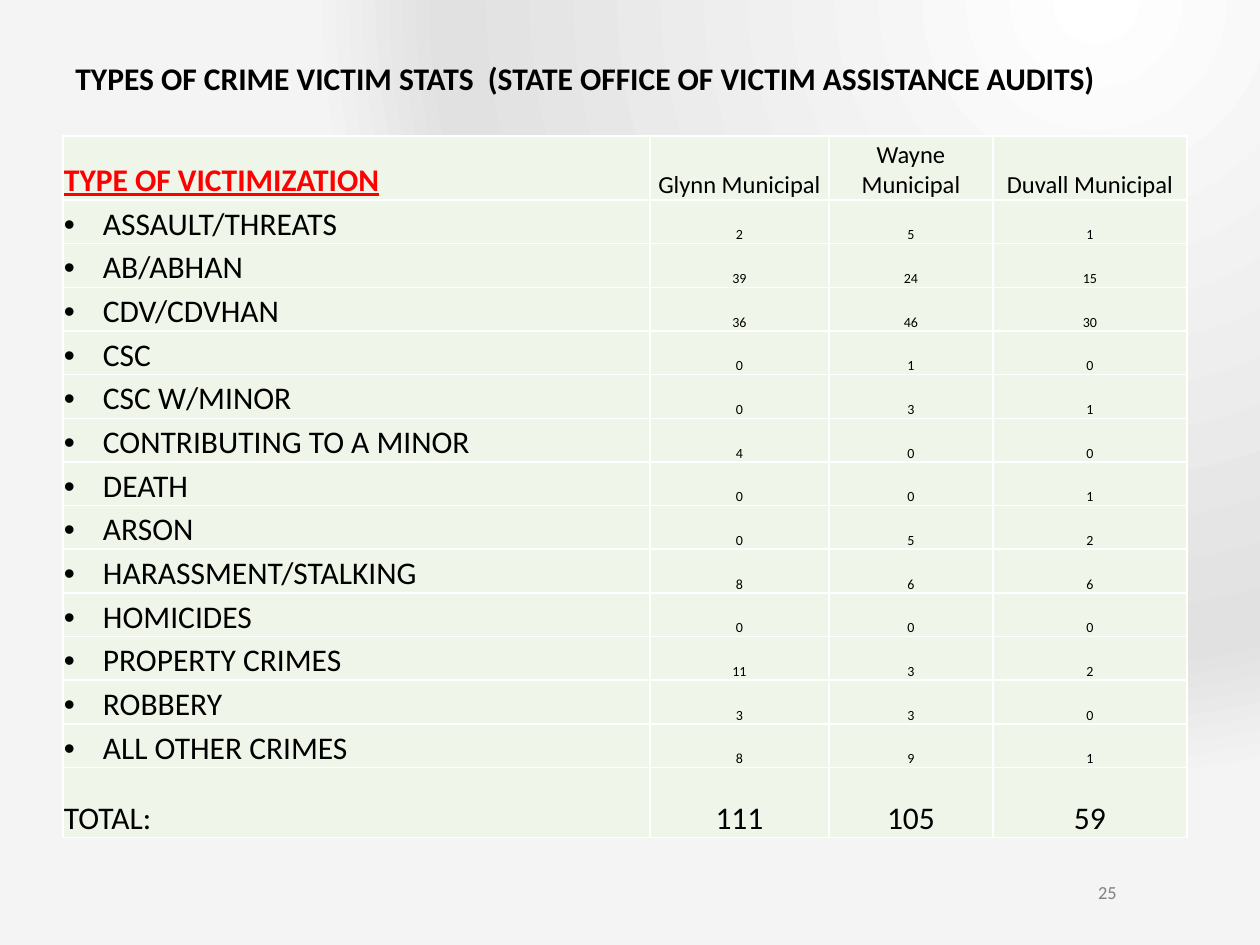
from pptx import Presentation
from pptx.dml.color import RGBColor
from pptx.enum.text import MSO_ANCHOR, PP_ALIGN
from pptx.oxml import parse_xml
from pptx.oxml.ns import nsdecls
from pptx.util import Emu, Pt

LEFT, CENTER = PP_ALIGN.LEFT, PP_ALIGN.CENTER
TOP, MIDDLE, BOTTOM = MSO_ANCHOR.TOP, MSO_ANCHOR.MIDDLE, MSO_ANCHOR.BOTTOM

BLACK = RGBColor(0x00, 0x00, 0x00)
WHITE = RGBColor(0xFF, 0xFF, 0xFF)
RED = RGBColor(0xFF, 0x00, 0x00)
GRAY = RGBColor(0x80, 0x80, 0x80)
PALE_GREEN = RGBColor(0xEF, 0xF5, 0xE8)
SILVER = RGBColor(0xE1, 0xE1, 0xE1)
MIST = RGBColor(0xF4, 0xF4, 0xF4)

FONT = "Calibri"
EMU_PER_PX = 914400 / 126

HEADINGS = ["TYPE OF VICTIMIZATION", "Glynn Municipal", "Wayne Municipal", "Duvall Municipal"]
CRIMES = [
    ("ASSAULT/THREATS", 2, 5, 1),
    ("AB/ABHAN", 39, 24, 15),
    ("CDV/CDVHAN", 36, 46, 30),
    ("CSC", 0, 1, 0),
    ("CSC W/MINOR", 0, 3, 1),
    ("CONTRIBUTING TO A MINOR", 4, 0, 0),
    ("DEATH", 0, 0, 1),
    ("ARSON", 0, 5, 2),
    ("HARASSMENT/STALKING", 8, 6, 6),
    ("HOMICIDES", 0, 0, 0),
    ("PROPERTY CRIMES", 11, 3, 2),
    ("ROBBERY", 3, 3, 0),
    ("ALL OTHER CRIMES", 8, 9, 1),
]
TOTALS = ("TOTAL:", 111, 105, 59)

COLUMN_WIDTHS = [587, 179, 164, 194]
HEADING_HEIGHT, CRIMES_HEIGHT, TOTAL_HEIGHT = 64, 568, 70
BULLET_INDENT = 39


def px(length):
    return Emu(round(length * EMU_PER_PX))


def set_background(slide):
    stops = "".join(
        f'<a:gs pos="{percent * 1000}"><a:srgbClr val="{color}"/></a:gs>'
        for percent, color in [(0, WHITE), (83, SILVER), (100, MIST)]
    )
    background = parse_xml(
        f'<p:bg {nsdecls("p", "a")}><p:bgPr><a:gradFill rotWithShape="1">'
        f'<a:gsLst>{stops}</a:gsLst><a:path path="circle">'
        '<a:fillToRect l="75000" t="100000" r="0" b="300000"/></a:path>'
        '</a:gradFill><a:effectLst/></p:bgPr></p:bg>'
    )
    slide.element.cSld.insert(0, background)


def add_bullet(paragraph):
    properties = paragraph._p.get_or_add_pPr()
    properties.set("marL", str(px(BULLET_INDENT)))
    properties.set("indent", str(-px(BULLET_INDENT)))
    properties.append(parse_xml(f'<a:buFont {nsdecls("a")} typeface="Arial"/>'))
    properties.append(parse_xml(f'<a:buChar {nsdecls("a")} char="•"/>'))


def write_text(frame, text, size=18, color=BLACK, bold=False, underline=False,
               align=LEFT, bullet=False):
    paragraph = frame.paragraphs[0]
    paragraph.alignment = align
    if bullet:
        add_bullet(paragraph)
    run = paragraph.add_run()
    run.text = str(text)
    font = run.font
    font.name, font.size, font.color.rgb = FONT, Pt(size), color
    font.bold, font.underline = bold, underline


def add_label(slide, text, left, top, width, height, anchor=TOP, **text_format):
    frame = slide.shapes.add_textbox(px(left), px(top), px(width), px(height)).text_frame
    frame.word_wrap = True
    frame.vertical_anchor = anchor
    write_text(frame, text, **text_format)


def fill_cell(cell, text, **text_format):
    cell.margin_left = cell.margin_right = cell.margin_top = px(1)
    cell.margin_bottom = 0
    cell.vertical_anchor = BOTTOM
    properties = cell._tc.get_or_add_tcPr()
    for side in "LRTB":
        properties.append(parse_xml(
            f'<a:ln{side} {nsdecls("a")} w="{Pt(1)}"><a:solidFill>'
            f'<a:srgbClr val="{WHITE}"/></a:solidFill></a:ln{side}>'
        ))
    cell.fill.solid()
    cell.fill.fore_color.rgb = PALE_GREEN
    write_text(cell.text_frame, text, **text_format)


def fill_row(table, row, values, label_format, value_format):
    for column, value in enumerate(values):
        text_format = value_format if column else label_format
        fill_cell(table.cell(row, column), value, **text_format)


def add_victim_table(slide):
    row_count = len(CRIMES) + 2
    table = slide.shapes.add_table(
        row_count, len(HEADINGS), px(63), px(136), px(sum(COLUMN_WIDTHS)),
        px(HEADING_HEIGHT + CRIMES_HEIGHT + TOTAL_HEIGHT)
    ).table
    table.first_row = table.horz_banding = False
    for column, width in zip(table.columns, COLUMN_WIDTHS):
        column.width = px(width)
    for row in table.rows:
        row.height = px(CRIMES_HEIGHT / len(CRIMES))
    table.rows[0].height = px(HEADING_HEIGHT)
    table.rows[row_count - 1].height = px(TOTAL_HEIGHT)

    fill_row(table, 0, HEADINGS, {"color": RED, "bold": True, "underline": True},
             {"size": 14, "align": CENTER})
    for row, crime in enumerate(CRIMES, start=1):
        fill_row(table, row, crime, {"bullet": True}, {"size": 8, "align": CENTER})
    fill_row(table, row_count - 1, TOTALS, {}, {"align": CENTER})


def main():
    presentation = Presentation()
    presentation.slide_width, presentation.slide_height = px(1260), px(945)
    slide = presentation.slides.add_slide(presentation.slide_layouts[6])
    set_background(slide)
    add_victim_table(slide)
    add_label(slide, "25", 1071, 882, 73, 21, anchor=MIDDLE,
              size=10.5, color=GRAY, align=CENTER)
    add_label(slide, "TYPES OF CRIME VICTIM STATS  (STATE OFFICE OF VICTIM ASSISTANCE AUDITS)",
              63, 53, 1061, 50, bold=True)
    presentation.save("out.pptx")


if __name__ == "__main__":
    main()
